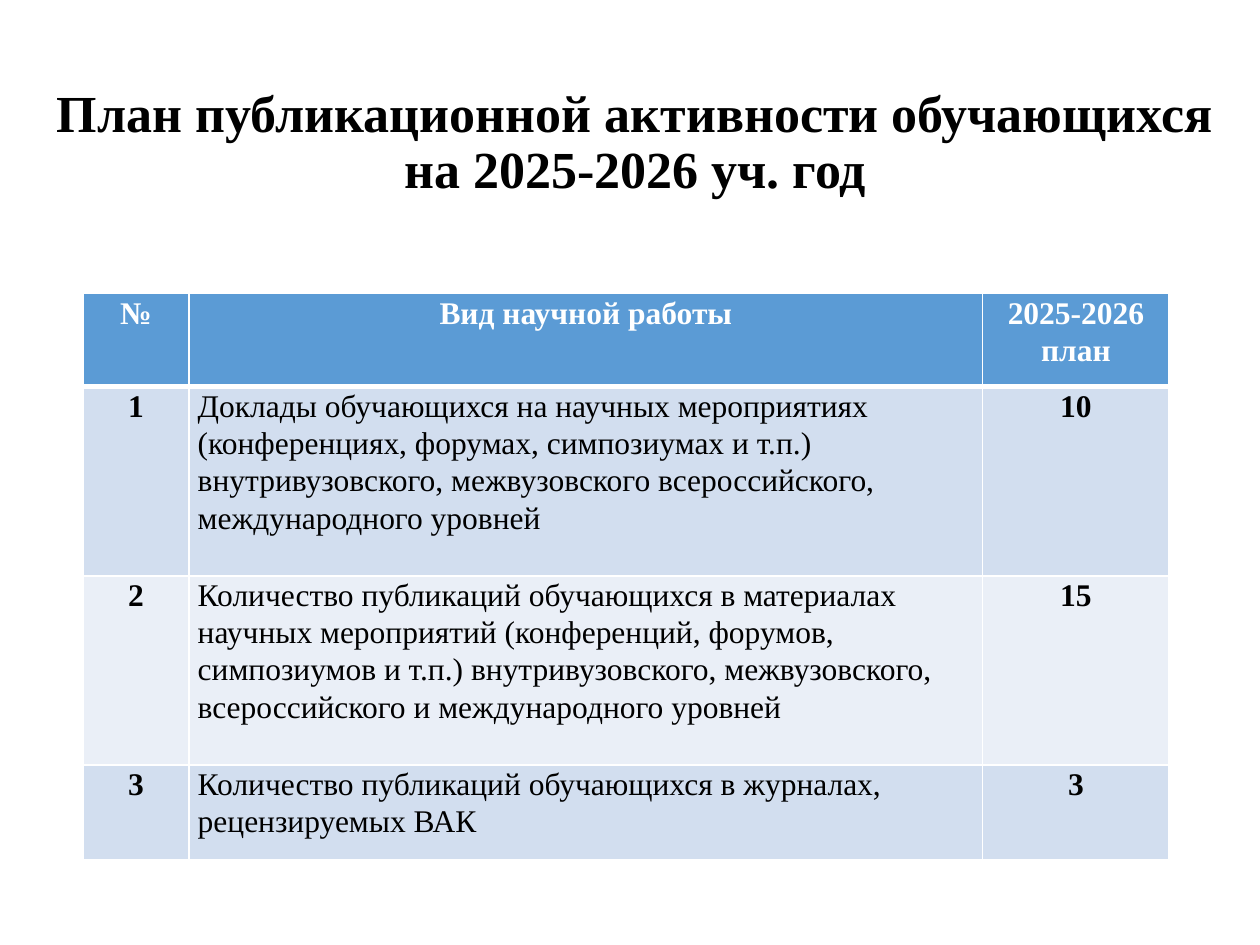
import pptx
import pptx.dml.color
import pptx.enum.text
import pptx.oxml
import pptx.oxml.ns
import pptx.util
from pptx.util import Inches

FONT = "Times New Roman"
HEADER_FILL, BANDS = "5B9BD5", ("D2DEEF", "EAEFF7")
COL_WIDTHS = (0.84, 6.3, 1.48)
ROW_HEIGHTS = (0.74, 1.5, 1.5, 0.75)
ROWS = (
    ("№", "Вид научной работы", "2025-2026\nплан"),
    ("1", "Доклады обучающихся на научных мероприятиях (конференциях, форумах, "
          "симпозиумах и т.п.) внутривузовского, межвузовского всероссийского, "
          "международного уровней", "10"),
    ("2", "Количество публикаций обучающихся в материалах научных мероприятий "
          "(конференций, форумов, симпозиумов и т.п.) внутривузовского, "
          "межвузовского, всероссийского и международного уровней", "15"),
    ("3", "Количество публикаций обучающихся в журналах, рецензируемых ВАК", "3"),
)


def rgb(value):
    return pptx.dml.color.RGBColor.from_string(value)


def write(tf, text, size=18, color="000000", bold=False, align="LEFT", spacing=1.07):
    """Fill a text frame, one paragraph per line of text."""
    tf.word_wrap = True
    for i, line in enumerate(text.split("\n")):
        p = tf.paragraphs[0] if i == 0 else tf.add_paragraph()
        p.alignment = getattr(pptx.enum.text.PP_ALIGN, align)
        p.line_spacing = spacing
        r = p.add_run()
        r.text = line
        r.font.name = FONT
        r.font.size = pptx.util.Pt(size)
        r.font.bold = bold
        r.font.color.rgb = rgb(color)


def add_title(s, text):
    tf = s.shapes.add_textbox(Inches(0.28), Inches(0.4), Inches(9.53), Inches(1.93)).text_frame
    tf.vertical_anchor = pptx.enum.text.MSO_ANCHOR.MIDDLE
    tf.margin_bottom = Inches(0.5)
    write(tf, text, size=29.7, bold=True, align="CENTER", spacing=0.9)


def set_borders(cell, color="FFFFFF", **widths):
    """Draw the four cell edges; widths in points, 1 unless given."""
    tc_pr = cell._tc.get_or_add_tcPr()
    for side in "LRTB":
        width = pptx.util.Pt(widths.get(side, 1))
        tc_pr.append(pptx.oxml.parse_xml(
            f'<a:ln{side} {pptx.oxml.ns.nsdecls("a")} w="{width}"><a:solidFill>'
            f'<a:srgbClr val="{color}"/></a:solidFill></a:ln{side}>'))


def add_plan_table(s):
    table = s.shapes.add_table(len(ROWS), len(COL_WIDTHS), Inches(0.66), Inches(2.33),
                               Inches(sum(COL_WIDTHS)), Inches(sum(ROW_HEIGHTS))).table
    for column, width in zip(table.columns, COL_WIDTHS):
        column.width = Inches(width)
    for i, (height, texts) in enumerate(zip(ROW_HEIGHTS, ROWS)):
        table.rows[i].height = Inches(height)
        header = i == 0
        for j, text in enumerate(texts):
            cell = table.cell(i, j)
            cell.margin_left = cell.margin_right = Inches(0.07)
            cell.margin_top = cell.margin_bottom = 0
            # Thick rule between the header and the body
            set_borders(cell, B=3 if header else 1, T=3 if i == 1 else 1)
            cell.fill.solid()
            cell.fill.fore_color.rgb = rgb(HEADER_FILL if header else BANDS[(i - 1) % 2])
            description = j == 1 and not header
            write(cell.text_frame, text, color="FFFFFF" if header else "000000",
                  bold=not description, align="LEFT" if description else "CENTER")


def main():
    prs = pptx.Presentation()
    prs.slide_width, prs.slide_height = Inches(10), Inches(7.5)
    s = prs.slides.add_slide(prs.slide_layouts[6])
    add_title(s, "План публикационной активности обучающихся\nна 2025-2026 уч. год")
    add_plan_table(s)
    prs.save("out.pptx")


if __name__ == "__main__":
    main()
